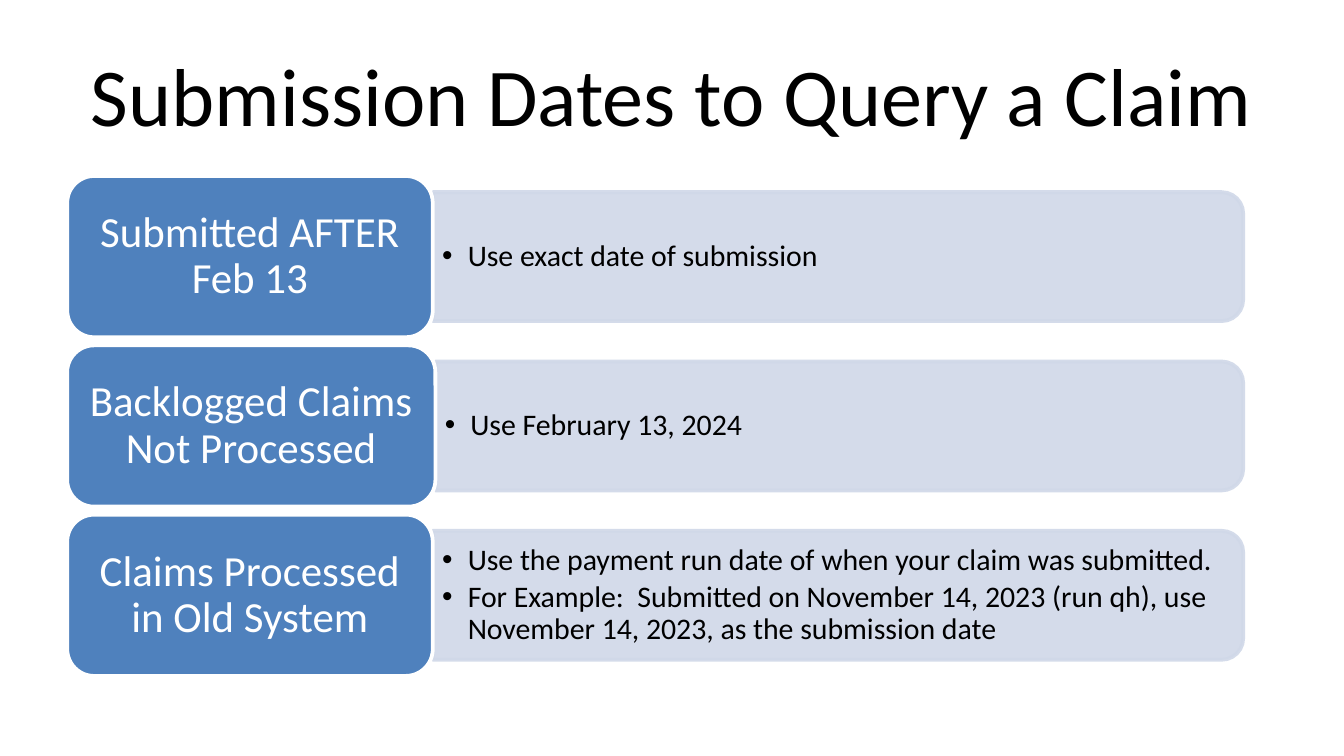
import dataclasses

import lxml.etree
import pptx
import pptx.dml.color
import pptx.enum.shapes
import pptx.enum.text
import pptx.oxml.ns
import pptx.util

Inches = pptx.util.Inches
Pt = pptx.util.Pt
Shape = pptx.enum.shapes.MSO_SHAPE
Align = pptx.enum.text.PP_ALIGN


@dataclasses.dataclass(frozen=True)
class Theme:
    font: str = "Calibri"
    dark: str = "000000"
    light: str = "FFFFFF"
    label_fill: str = "4F81BD"
    panel_fill: str = "D0D8E8"
    panel_opacity: int = 90
    outline: float = 2
    title_size: int = 44
    label_size: int = 23
    detail_size: int = 16


def rgb(value):
    return pptx.dml.color.RGBColor.from_string(value)


def add_child(parent, tag, **attributes):
    return lxml.etree.SubElement(parent, pptx.oxml.ns.qn(tag), attributes)


class SlideBuilder:
    def __init__(self, slide, theme):
        self.slide = slide
        self.theme = theme

    def prepare_frame(self, shape, horizontal, vertical):
        frame = shape.text_frame
        frame.word_wrap = True
        frame.vertical_anchor = pptx.enum.text.MSO_ANCHOR.MIDDLE
        frame.margin_left = frame.margin_right = Inches(horizontal)
        frame.margin_top = frame.margin_bottom = Inches(vertical)
        return frame

    def style(self, paragraph, size, color, align, line_spacing=0.9):
        paragraph.alignment = align
        paragraph.line_spacing = line_spacing
        paragraph.font.name = self.theme.font
        paragraph.font.size = Pt(size)
        paragraph.font.color.rgb = rgb(color)

    def box(self, kind, left, top, width, height, fill, line):
        shape = self.slide.shapes.add_shape(
            kind, Inches(left), Inches(top), Inches(width), Inches(height))
        shape.shadow.inherit = False
        shape.fill.solid()
        shape.fill.fore_color.rgb = rgb(fill)
        shape.line.color.rgb = rgb(line)
        shape.line.width = Pt(self.theme.outline)
        return shape

    def title(self, text, left, top, width, height):
        shape = self.slide.shapes.add_textbox(
            Inches(left), Inches(top), Inches(width), Inches(height))
        frame = self.prepare_frame(shape, 0.1, 0.05)
        frame.text = text
        self.style(frame.paragraphs[0], self.theme.title_size,
                   self.theme.dark, Align.CENTER, 1.0)

    def panel(self, left, middle, width, height):
        """Bar with rounded right corners: a top-rounded shape turned a quarter."""
        theme = self.theme
        shape = self.box(
            Shape.ROUND_2_SAME_RECTANGLE, left + (width - height) / 2,
            middle - width / 2, height, width, theme.panel_fill, theme.panel_fill)
        shape.rotation = 90
        for color in shape._element.spPr.iter(pptx.oxml.ns.qn("a:srgbClr")):
            add_child(color, "a:alpha", val=str(theme.panel_opacity * 1000))

    def bullets(self, texts, left, middle, width, height):
        shape = self.slide.shapes.add_textbox(
            Inches(left), Inches(middle - height / 2), Inches(width), Inches(height))
        frame = self.prepare_frame(shape, 0.07, 0.03)
        indent = Inches(0.19)
        for index, text in enumerate(texts):
            paragraph = frame.add_paragraph() if index else frame.paragraphs[0]
            paragraph.text = text
            properties = paragraph._p.get_or_add_pPr()
            properties.set("marL", str(indent))
            properties.set("indent", str(-indent))
            add_child(properties, "a:buFont", typeface="Arial")
            add_child(properties, "a:buChar", char="•")
            paragraph.space_after = Pt(2.5)
            self.style(paragraph, self.theme.detail_size, self.theme.dark, Align.LEFT)

    def label(self, text, left, middle, width, height):
        theme = self.theme
        shape = self.box(Shape.ROUNDED_RECTANGLE, left, middle - height / 2,
                         width, height, theme.label_fill, theme.light)
        frame = self.prepare_frame(shape, 0.1, 0.05)
        frame.text = text
        self.style(frame.paragraphs[0], theme.label_size, theme.light, Align.CENTER)


ROWS = [
    ("Submitted AFTER Feb 13", 2.72, ["Use exact date of submission"]),
    ("Backlogged Claims Not Processed", 2.74, ["Use February 13, 2024"]),
    ("Claims Processed in Old System", 2.72, [
        "Use the payment run date of when your claim was submitted.",
        "For Example:  Submitted on November 14, 2023 (run qh), use "
        "November 14, 2023, as the submission date",
    ]),
]


def main():
    presentation = pptx.Presentation()
    presentation.slide_width = Inches(10)
    presentation.slide_height = presentation.slide_width * 9 // 16
    slide = presentation.slides.add_slide(presentation.slide_layouts[6])
    builder = SlideBuilder(slide, Theme())

    builder.title("Submission Dates to Query a Claim", 0.5, 0.23, 9, 0.94)

    left, right = 0.5, 9.25
    first_middle, pitch = 1.91, 1.26
    for index, (label, label_width, details) in enumerate(ROWS):
        middle = first_middle + index * pitch
        panel_left = left + label_width
        panel_width = right - panel_left
        builder.panel(panel_left, middle, panel_width, 0.96)
        builder.bullets(details, panel_left, middle, panel_width - 0.05, 0.86)
        builder.label(label, left, middle, label_width, 1.2)

    presentation.save("out.pptx")


if __name__ == "__main__":
    main()
